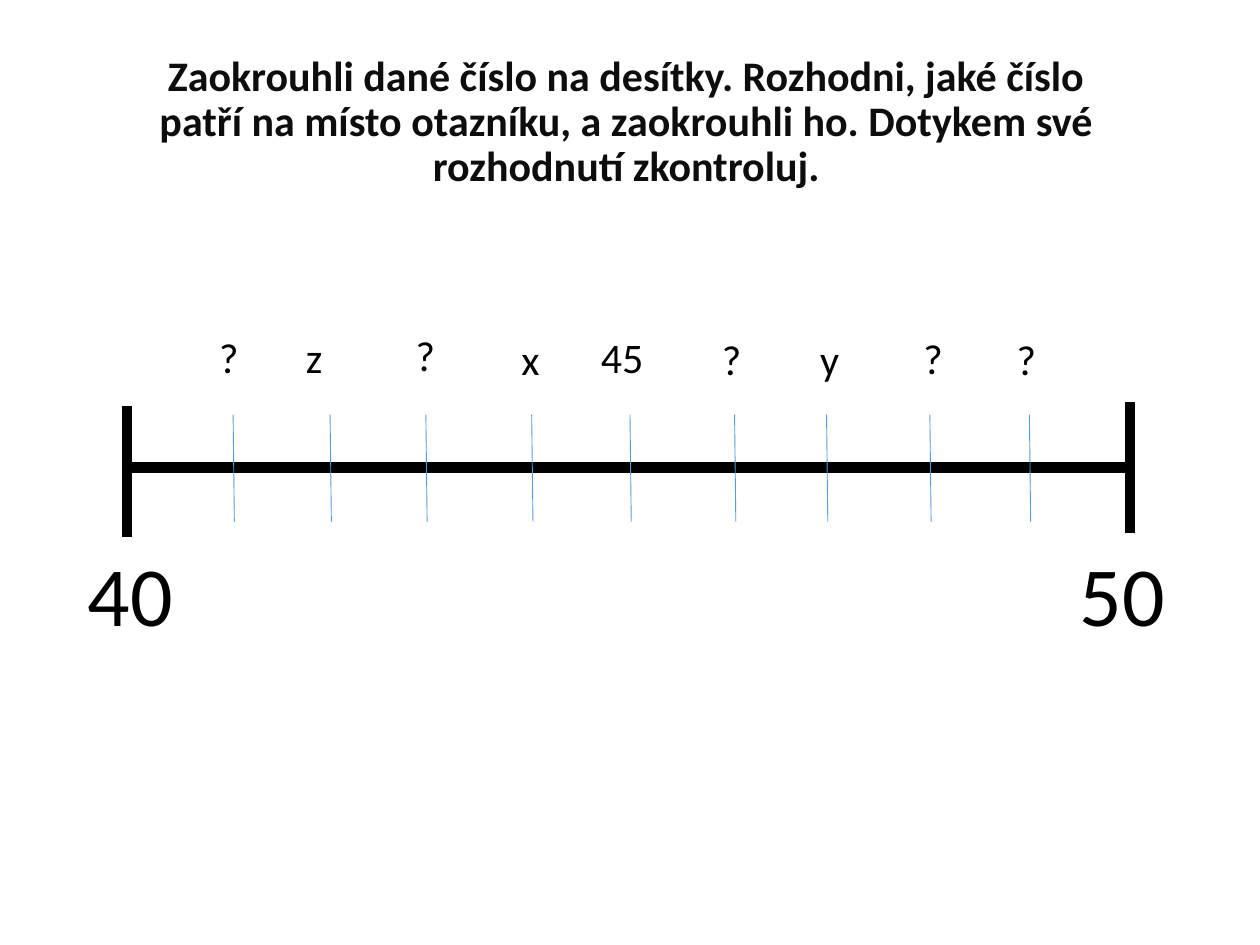
from dataclasses import dataclass

from lxml.etree import SubElement
from pptx import Presentation
from pptx.dml.color import RGBColor
from pptx.enum.shapes import MSO_CONNECTOR as Connector
from pptx.enum.text import MSO_ANCHOR as Anchor, MSO_AUTO_SIZE as AutoSize, PP_ALIGN as Align
from pptx.oxml.ns import qn
from pptx.util import Inches, Pt


@dataclass(frozen=True)
class Theme:
    font: str = "Calibri"
    title_color: RGBColor = RGBColor(0x0D, 0x0D, 0x0D)
    black: RGBColor = RGBColor(0, 0, 0)
    tick_color: RGBColor = RGBColor(0x5B, 0x9B, 0xD5)
    text_size: Pt = Pt(24)
    end_size: Pt = Pt(48)
    axis_width: Pt = Pt(6)
    tick_width: Pt = Pt(0.5)


theme = Theme()


def add_text(page, text, left, top, width, height, size, color=theme.black):
    box = page.shapes.add_textbox(Inches(left), Inches(top), Inches(width), Inches(height))
    box.text_frame.word_wrap = True
    box.text_frame.auto_size = AutoSize.SHAPE_TO_FIT_TEXT
    para = box.text_frame.paragraphs[0]
    para.text = text
    para.font.name = theme.font
    para.font.size = size
    para.font.color.rgb = color
    return box


def add_line(group, x1, y1, x2, y2, color, width):
    line = group.shapes.add_connector(
        Connector.STRAIGHT, Inches(x1), Inches(y1), Inches(x2), Inches(y2))
    line.line.color.rgb = color
    line.line.width = width
    SubElement(line._element.spPr, qn("a:effectLst"))


deck = Presentation()
deck.slide_width, deck.slide_height = Inches(10), Inches(7.5)
page = deck.slides.add_slide(deck.slide_layouts[6])

# Task
title = add_text(
    page,
    "Zaokrouhli dané číslo na desítky. Rozhodni, jaké číslo patří na místo otazníku, "
    "a zaokrouhli ho. Dotykem své rozhodnutí zkontroluj.",
    1.01, 0.35, 7.92, 1.25, theme.text_size, theme.title_color)
title.text_frame.auto_size = AutoSize.NONE
title.text_frame.vertical_anchor = Anchor.MIDDLE
heading = title.text_frame.paragraphs[0]
heading.alignment = Align.CENTER
heading.line_spacing = 0.9
heading.font.bold = True

# Number line with its two end bars
number_line = page.shapes.add_group_shape()
add_line(number_line, 1.01, 3.71, 8.93, 3.71, theme.black, theme.axis_width)
for x, top in [(1.01, 3.22), (8.97, 3.19)]:
    add_line(number_line, x, top, x, top + 1.04, theme.black, theme.axis_width)

# Ticks, slightly slanted
for x in [1.85, 2.62, 3.38, 4.22, 5, 5.83, 6.56, 7.38, 8.17]:
    add_line(number_line, x, 3.29, x + 0.01, 4.14, theme.tick_color, theme.tick_width)

# End numbers
for text, left, width in [("40", 0.6, 0.94), ("50", 8.47, 1.04)]:
    add_text(page, text, left, 4.26, width, 0.91, theme.end_size)

# Labels above the ticks
labels = [
    ("?", 1.64, 2.58, 0.63), ("z", 2.33, 2.58, 0.81), ("?", 3.2, 2.57, 0.7),
    ("x", 4.04, 2.6, 0.65), ("45", 4.67, 2.58, 0.61), ("?", 5.63, 2.6, 0.59),
    ("y", 6.41, 2.6, 0.61), ("?", 7.23, 2.59, 0.55), ("?", 7.97, 2.6, 0.61),
]
for text, left, top, width in labels:
    add_text(page, text, left, top, width, 0.5, theme.text_size)

deck.save("out.pptx")
